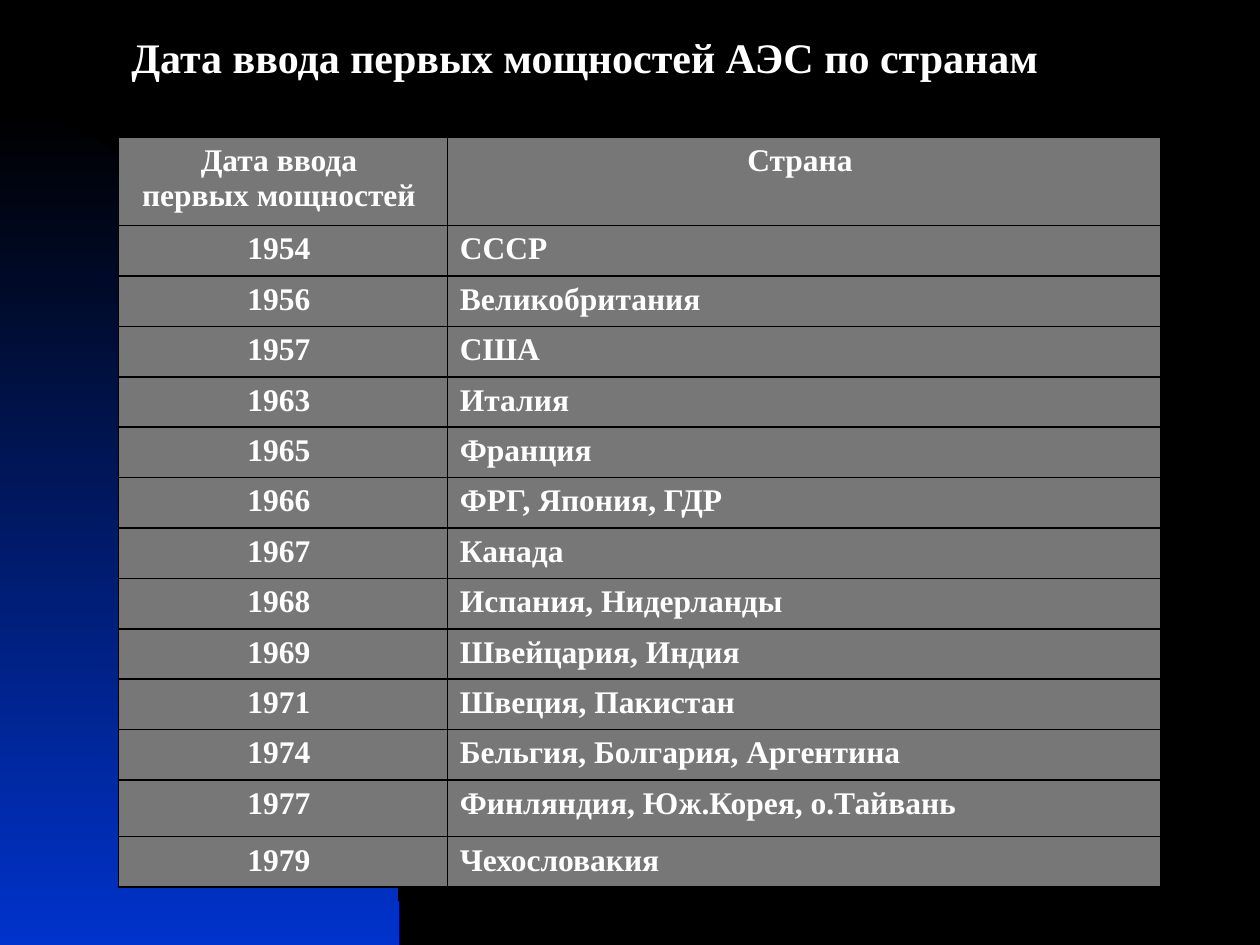
from dataclasses import dataclass

from lxml import etree
from pptx import Presentation
from pptx.dml.color import RGBColor
from pptx.enum.text import MSO_ANCHOR, PP_ALIGN
from pptx.oxml.ns import qn
from pptx.util import Inches, Pt

CENTER, JUSTIFY = PP_ALIGN.CENTER, PP_ALIGN.JUSTIFY
BOTTOM = MSO_ANCHOR.BOTTOM
TITLE_ONLY = 5


@dataclass(frozen=True)
class Theme:
    font: str = "Times New Roman"
    title_size: int = 24
    table_size: int = 18
    text: str = "FFFFFF"
    background: str = "000000"
    glow: str = "0033CC"
    cell: str = "777777"
    border: str = "000000"
    border_width: int = 1


THEME = Theme()
SLIDE_WIDTH, SLIDE_HEIGHT = 10, 7.5
TITLE = "Дата ввода первых мощностей АЭС по странам"
HEADER = ("Дата ввода \nпервых мощностей", "Страна")
STARTS = (
    ("1954", "СССР"),
    ("1956", "Великобритания"),
    ("1957", "США"),
    ("1963", "Италия"),
    ("1965", "Франция"),
    ("1966", "ФРГ, Япония, ГДР"),
    ("1967", "Канада"),
    ("1968", "Испания, Нидерланды"),
    ("1969", "Швейцария, Индия"),
    ("1971", "Швеция, Пакистан"),
    ("1974", "Бельгия, Болгария, Аргентина"),
    ("1977", "Финляндия, Юж.Корея, о.Тайвань"),
    ("1979", "Чехословакия"),
)
COLUMN_WIDTHS = (2.61, 5.66)
HEADER_HEIGHT, ROW_HEIGHT, TALL_ROW_HEIGHT = 0.7, 0.4, 0.45
TALL_YEAR = "1977"


def color(value):
    return RGBColor.from_string(value)


def set_values(target, values):
    for name, value in values.items():
        setattr(target, name, value)


def format_text(frame, size, alignment):
    for para in frame.paragraphs:
        para.alignment = alignment
        for span in para.runs:
            set_values(span.font, {"name": THEME.font, "size": Pt(size), "bold": True})
            span.font.color.rgb = color(THEME.text)


def set_background(page):
    fill = page.background.fill
    fill.solid()
    fill.fore_color.rgb = color(THEME.background)


def add_glow(page, left, top, width, height, steps=48):
    """Add a gradient area under a curve that falls from top left to bottom right."""
    points = []
    for step in range(1, steps + 1):
        t = step / steps
        across = 3 * t * (1 - t) ** 2 * 0.55 + 3 * t ** 2 * (1 - t) + t ** 3
        down = 3 * t ** 2 * (1 - t) * 0.45 + t ** 3
        points.append((Inches(left + across * width), Inches(top + down * height)))
    points.append((Inches(left), Inches(top + height)))
    builder = page.shapes.build_freeform(Inches(left), Inches(top))
    builder.add_line_segments(points, close=True)
    glow = builder.convert_to_shape()
    glow.shadow.inherit = False
    glow.line.fill.background()
    glow.fill.gradient()
    glow.fill.gradient_angle = 270
    for stop, value in zip(glow.fill.gradient_stops, (THEME.background, THEME.glow)):
        stop.color.rgb = color(value)


def place_title(page, text, left, top, width, height):
    title = page.shapes.title
    set_values(title, {"left": Inches(left), "top": Inches(top),
                       "width": Inches(width), "height": Inches(height)})
    frame = title.text_frame
    frame.text = text
    set_values(frame, {"word_wrap": True, "vertical_anchor": BOTTOM,
                       "margin_bottom": Inches(0.45)})
    format_text(frame, THEME.title_size, CENTER)


def add_borders(cell):
    properties = cell._tc.get_or_add_tcPr()
    for side in ("a:lnL", "a:lnR", "a:lnT", "a:lnB"):
        line = etree.SubElement(properties, qn(side), w=str(Pt(THEME.border_width)))
        fill = etree.SubElement(line, qn("a:solidFill"))
        etree.SubElement(fill, qn("a:srgbClr"), val=THEME.border)


def fill_cell(cell, text, alignment):
    cell.text = f"{text} "
    format_text(cell.text_frame, THEME.table_size, alignment)
    add_borders(cell)
    cell.fill.solid()
    cell.fill.fore_color.rgb = color(THEME.cell)


def add_country_table(page, left, top):
    rows = (HEADER, *STARTS)
    heights = [HEADER_HEIGHT] + [
        TALL_ROW_HEIGHT if year == TALL_YEAR else ROW_HEIGHT for year, _ in STARTS
    ]
    table = page.shapes.add_table(
        len(rows), len(COLUMN_WIDTHS), Inches(left), Inches(top),
        Inches(sum(COLUMN_WIDTHS)), Inches(sum(heights)),
    ).table
    set_values(table, {"first_row": False, "horz_banding": False})
    for column, width in zip(table.columns, COLUMN_WIDTHS):
        column.width = Inches(width)
    for index, (texts, height) in enumerate(zip(rows, heights)):
        table.rows[index].height = Inches(height)
        alignments = (CENTER, JUSTIFY if index else CENTER)
        for cell, text, alignment in zip(table.rows[index].cells, texts, alignments):
            fill_cell(cell, text, alignment)


def main():
    deck = Presentation()
    set_values(deck, {"slide_width": Inches(SLIDE_WIDTH),
                      "slide_height": Inches(SLIDE_HEIGHT)})
    page = deck.slides.add_slide(deck.slide_layouts[TITLE_ONLY])
    set_background(page)
    add_glow(page, 0, 0.92, 3.17, SLIDE_HEIGHT - 0.92)
    place_title(page, TITLE, 0.39, 0.16, 8.5, 0.94)
    add_country_table(page, 0.94, 1.09)
    deck.save("out.pptx")


if __name__ == "__main__":
    main()
